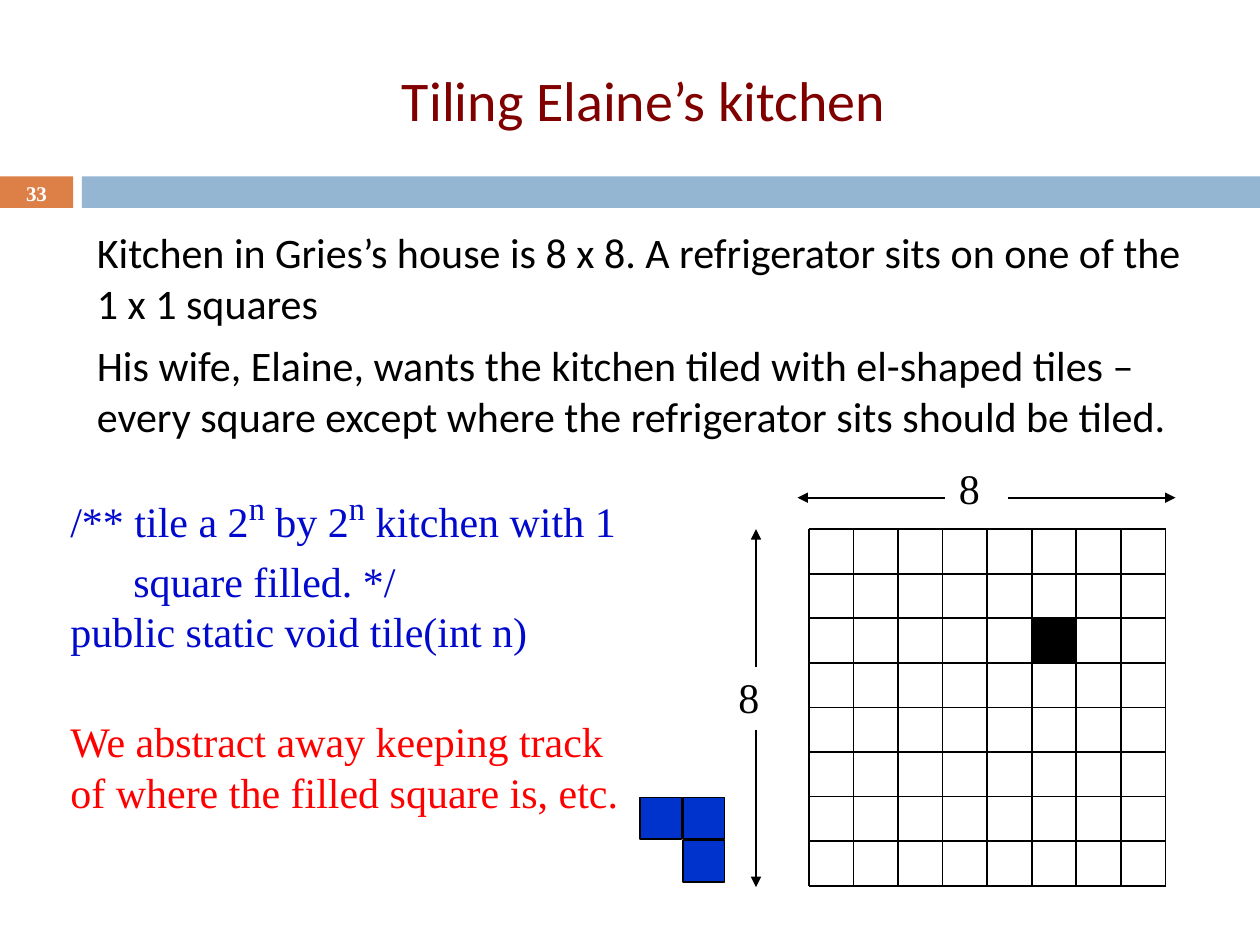
from lxml.etree import SubElement
from pptx import Presentation
from pptx.dml.color import RGBColor
from pptx.enum.shapes import MSO_CONNECTOR, MSO_SHAPE
from pptx.enum.text import MSO_ANCHOR, PP_ALIGN
from pptx.oxml.ns import qn
from pptx.util import Inches, Pt

SERIF = "Times New Roman"
SANS = "Calibri"


def rgb(value):
    return RGBColor.from_string(value)


class SlideBuilder:
    ink = "000000"
    code = "0009CC"
    tile = "0033CC"

    def __init__(self, prs):
        self.s = prs.slides.add_slide(prs.slide_layouts[5])

    def font(self, p, size, color, name, bold=False):
        p.font.size = Pt(size)
        p.font.name = name
        p.font.bold = bold
        p.font.color.rgb = rgb(color)

    def place(self, sp, x, y, w, h):
        sp.left, sp.top, sp.width, sp.height = map(Inches, (x, y, w, h))

    def frame(self, sp, insets, anchor=MSO_ANCHOR.TOP, wrap=True):
        tf = sp.text_frame
        tf.word_wrap = wrap
        tf.vertical_anchor = anchor
        (tf.margin_left, tf.margin_top,
         tf.margin_right, tf.margin_bottom) = map(Inches, insets)
        return tf

    def title(self, text, x, y, w, h):
        sp = self.s.shapes.title
        self.place(sp, x, y, w, h)
        tf = self.frame(sp, (0.1, 0.05, 0.14, 0.05), MSO_ANCHOR.MIDDLE)
        tf.text = text
        p = tf.paragraphs[0]
        p.alignment = PP_ALIGN.CENTER
        self.font(p, 32, "800000", SANS)

    def text(self, paragraphs, x, y, w, h, size=24, color=ink, name=SERIF,
             bold=False, before=0, align=PP_ALIGN.LEFT,
             insets=(0.1, 0.05, 0.1, 0.05), anchor=MSO_ANCHOR.TOP, wrap=True):
        sp = self.s.shapes.add_textbox(*map(Inches, (x, y, w, h)))
        tf = self.frame(sp, insets, anchor, wrap)
        for i, text in enumerate(paragraphs):
            p = tf.paragraphs[0] if i == 0 else tf.add_paragraph()
            p.text = text
            p.alignment = align
            p.space_before = Pt(before)
            self.font(p, size, color, name, bold)
        return tf

    def superscripts(self, p, parts):
        for i, text in enumerate(parts):
            r = p.add_run()
            r.text = text
            if i % 2:
                r.font.size = Pt(32)
                r.font._element.set("baseline", "30000")

    def rect(self, x, y, w, h, fill, outlined=False):
        sp = self.s.shapes.add_shape(
            MSO_SHAPE.RECTANGLE, *map(Inches, (x, y, w, h)))
        sp.shadow.inherit = False
        sp.fill.solid()
        sp.fill.fore_color.rgb = rgb(fill)
        if outlined:
            sp.line.color.rgb = rgb(self.ink)
            sp.line.width = Pt(1)
        else:
            sp.line.fill.background()

    def line(self, x1, y1, x2, y2, arrow=False):
        cxn = self.s.shapes.add_connector(
            MSO_CONNECTOR.STRAIGHT, *map(Inches, (x1, y1, x2, y2)))
        cxn.line.color.rgb = rgb(self.ink)
        cxn.line.width = Pt(1)
        if arrow:
            ln = cxn.line._get_or_add_ln()
            SubElement(ln, qn("a:tailEnd"), type="triangle")
        SubElement(cxn._element.spPr, qn("a:effectLst"))

    def grid(self, x, y, size, count):
        for i in range(count + 1):
            d = size * i / count
            self.line(x + d, y, x + d, y + size)
            self.line(x, y + d, x + size, y + d)


def main():
    prs = Presentation()
    prs.slide_width, prs.slide_height = Inches(10), Inches(7.5)
    b = SlideBuilder(prs)

    b.rect(0, 1.4, 0.58, 0.25, "DD8047")
    b.rect(0.65, 1.4, 9.35, 0.25, "94B6D2")
    b.title("Tiling Elaine’s kitchen", 0.67, 0.25, 8.92, 1.08)
    number = b.text(["33"], 0, 1.42, 0.58, 0.27, size=12, color="FFFFFF",
                    bold=True, align=PP_ALIGN.CENTER, anchor=MSO_ANCHOR.MIDDLE)
    number.paragraphs[0].line_spacing = 0.8

    b.text(["Kitchen in Gries’s house is 8 x 8. A refrigerator sits on one "
            "of the 1 x 1 squares",
            "His wife, Elaine, wants the kitchen tiled with el-shaped tiles "
            "–every square except where the refrigerator sits should be tiled."],
           0.67, 1.75, 8.92, 4.92, name=SANS, before=7,
           insets=(0.1, 0.05, 0.14, 0.05))

    for x, y in ((5.42, 6.67), (5.42, 6.33), (5.08, 6.33)):
        b.rect(x, y, 0.33, 0.33, b.tile, outlined=True)

    left, top, size, count = 6.42, 4.2, 2.83, 8
    cell = size / count
    b.rect(left + 5 * cell, top + 2 * cell, cell, cell, b.ink)
    b.grid(left, top, size, count)

    for x, y in ((5.82, 5.33), (7.57, 3.67)):
        b.text(["8"], x, y, 0.34, 0.47, insets=(0.04, 0, 0.04, 0), wrap=False)
    for ends in ((6, 5.79, 6, 7.04), (6, 5.29, 6, 4.2),
                 (7.5, 3.95, 6.33, 3.95), (8, 3.95, 9.33, 3.95)):
        b.line(*ends, arrow=True)

    tf = b.text(["", "square filled. */", "public static void tile(int n)",
                 "We abstract away keeping track of where the filled square "
                 "is, etc."], 0.46, 3.77, 4.71, 2.65, color=b.code)
    spec_line, spec_end, header, remark = tf.paragraphs
    b.superscripts(spec_line,
                   ["/** tile a 2", "n", " by 2", "n", " kitchen with 1"])
    spec_line.space_before = spec_end.space_before = Pt(4)
    spec_end._p.get_or_add_pPr().set("marL", str(Inches(0.5)))
    remark.space_before = Pt(34)
    remark.font.color.rgb = rgb("FF0000")

    prs.save("out.pptx")


if __name__ == "__main__":
    main()
